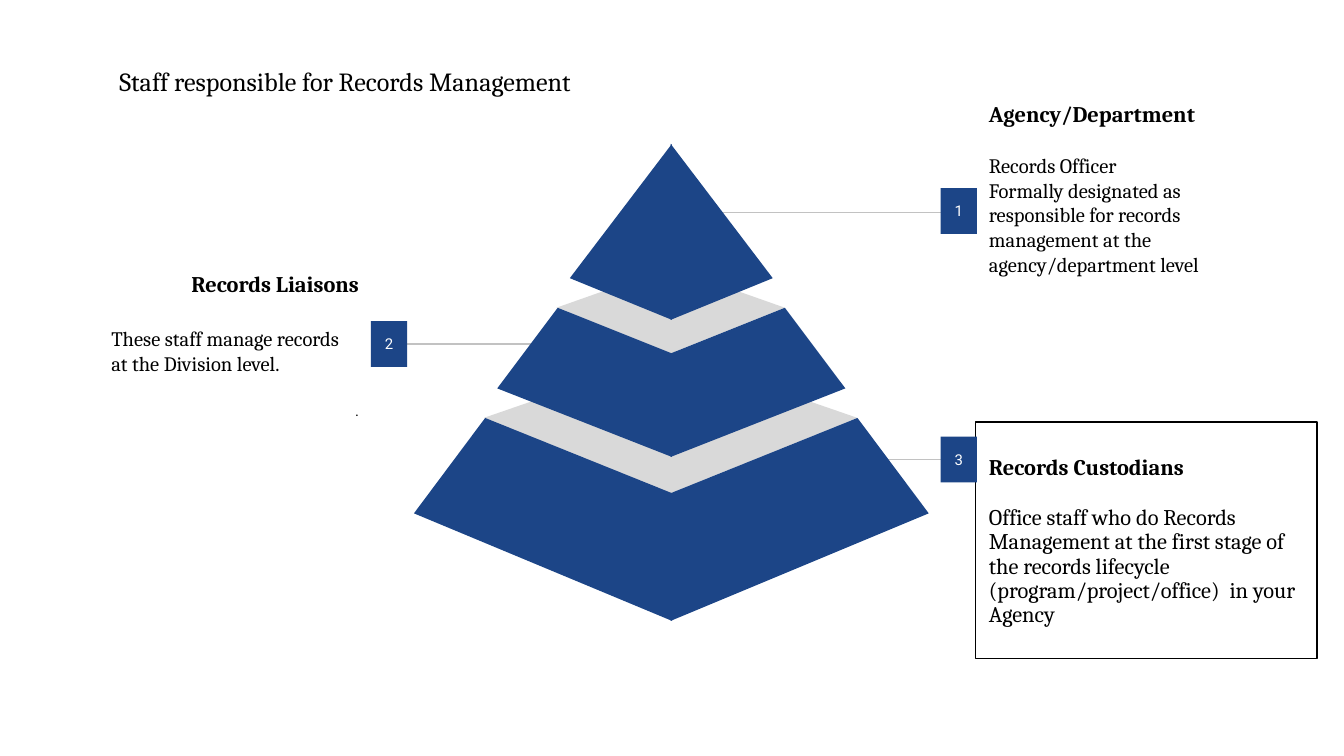
"""Build a slide showing the three staff tiers responsible for records management."""
from dataclasses import dataclass

from pptx import Presentation
from pptx.dml.color import RGBColor
from pptx.enum.shapes import MSO_CONNECTOR, MSO_SHAPE
from pptx.enum.text import MSO_ANCHOR, PP_ALIGN
from pptx.oxml.ns import qn
from pptx.util import Inches, Pt


@dataclass(frozen=True)
class Theme:
    blue: RGBColor = RGBColor(0x1C, 0x45, 0x87)
    gray: RGBColor = RGBColor(0xD9, 0xD9, 0xD9)
    rule: RGBColor = RGBColor(0xC2, 0xC2, 0xC2)
    black: RGBColor = RGBColor(0, 0, 0)
    white: RGBColor = RGBColor(0xFF, 0xFF, 0xFF)
    serif: str = "Cambria"
    sans: str = "Roboto"
    title: Pt = Pt(14)
    heading: Pt = Pt(12)
    body: Pt = Pt(11)
    small: Pt = Pt(8)
    hairline: Pt = Pt(0.75)


theme = Theme()


def add_paragraph(frame, text, size, font=theme.serif, color=theme.black,
                  bold=False, align=PP_ALIGN.LEFT, before=0, spacing=1.0):
    paragraph = frame.paragraphs[0]
    if paragraph.runs:
        paragraph = frame.add_paragraph()
    paragraph.alignment = align
    paragraph.space_before = Pt(before)
    paragraph.line_spacing = spacing
    run = paragraph.add_run()
    run.text = text
    run.font.name = font
    run.font.size = size
    run.font.bold = bold
    run.font.color.rgb = color


def prepare_frame(frame, anchor=MSO_ANCHOR.MIDDLE, bottom=0.1):
    frame.word_wrap = True
    frame.vertical_anchor = anchor
    frame.margin_left = frame.margin_top = frame.margin_right = Inches(0.1)
    frame.margin_bottom = Inches(bottom)
    return frame


deck = Presentation()
deck.slide_width, deck.slide_height = Inches(10), Inches(10 * 9 / 16)
shapes = deck.slides.add_slide(deck.slide_layouts[6]).shapes

for start, end, y in [(6.6, 7.24, 3.42), (4, 2.86, 2.56), (5.37, 7.24, 1.58)]:
    leader = shapes.add_connector(
        MSO_CONNECTOR.STRAIGHT, Inches(start), Inches(y), Inches(end), Inches(y))
    leader.line.color.rgb = theme.rule
    leader.line.width = theme.hairline
    properties = leader._element.spPr
    properties.append(properties.makeelement(qn("a:effectLst"), {}))

custodians = shapes.add_shape(
    MSO_SHAPE.RECTANGLE, Inches(7.26), Inches(3.14), Inches(2.54), Inches(1.76))
custodians.shadow.inherit = False
custodians.fill.background()
custodians.line.color.rgb = theme.black
custodians.line.width = theme.hairline
custodians_text = prepare_frame(custodians.text_frame)
add_paragraph(custodians_text, "Records Custodians", theme.heading, bold=True)
add_paragraph(
    custodians_text,
    "Office staff who do Records Management at the first stage of the records "
    "lifecycle (program/project/office)  in your Agency",
    theme.heading, before=14, spacing=0.9)

liaisons = shapes.add_textbox(Inches(0.73), Inches(1.81), Inches(2.04), Inches(1.51))
liaisons_text = prepare_frame(liaisons.text_frame)
add_paragraph(liaisons_text, "Records Liaisons", theme.heading, bold=True,
              align=PP_ALIGN.RIGHT)
add_paragraph(liaisons_text, "These staff manage records at the Division level.",
              theme.body, before=16)
add_paragraph(liaisons_text, ".", theme.small, theme.sans, align=PP_ALIGN.RIGHT, before=14)

agency = shapes.add_textbox(Inches(7.26), Inches(0.81), Inches(2.04), Inches(1.51))
agency_text = prepare_frame(agency.text_frame, bottom=0.43)
add_paragraph(agency_text, "Agency/Department", theme.heading, bold=True)
add_paragraph(agency_text, "Records Officer", theme.body, before=14)
add_paragraph(
    agency_text,
    "Formally designated as responsible for records management at the "
    "agency/department level",
    theme.body)

for number, left, top in [("1", 7, 1.4), ("2", 2.76, 2.39), ("3", 7, 3.25)]:
    badge = shapes.add_shape(
        MSO_SHAPE.RECTANGLE, Inches(left), Inches(top), Inches(0.27), Inches(0.34))
    badge.shadow.inherit = False
    badge.fill.solid()
    badge.fill.fore_color.rgb = theme.blue
    badge.line.fill.background()
    badge_text = prepare_frame(badge.text_frame, MSO_ANCHOR.TOP)
    add_paragraph(badge_text, number, theme.small, theme.sans, theme.white,
                  align=PP_ALIGN.CENTER)

left_axis, right_axis = 5, 4.99
left_side, right_side = (-1, left_axis), (1, right_axis)
tiers = [
    (theme.gray, [(-1.39, 3.11), (0, 3.67), (1.39, 3.11), (0, 2.63)]),
    (theme.blue, [(1.39, 3.11), (1.92, 3.82), (0, 4.62), (0, 3.67)]),
    (theme.gray, [(-0.85, 2.29), (0, 2.63), (0.85, 2.29), (0, 1.99)]),
    (theme.blue, [(0.85, 2.29), (1.3, 2.89), (0, 3.4), (0, 2.63)]),
    (theme.blue, [(0, 1.07), (0.76, 2.07), (0, 2.38)]),
]
for color, outline in tiers:
    sides = [left_side, right_side] if color == theme.blue else [right_side]
    for direction, axis in sides:
        corners = [(Inches(axis + direction * x), Inches(y)) for x, y in outline]
        builder = shapes.build_freeform(*corners[0])
        builder.add_line_segments(corners[1:], close=True)
        face = builder.convert_to_shape()
        face.shadow.inherit = False
        face.fill.solid()
        face.fill.fore_color.rgb = color
        face.line.fill.background()

title = shapes.add_textbox(Inches(0.79), Inches(0.39), Inches(4.46), Inches(0.44))
title_text = prepare_frame(title.text_frame, MSO_ANCHOR.TOP)
add_paragraph(title_text, "Staff responsible for Records Management", theme.title)

deck.save("out.pptx")
